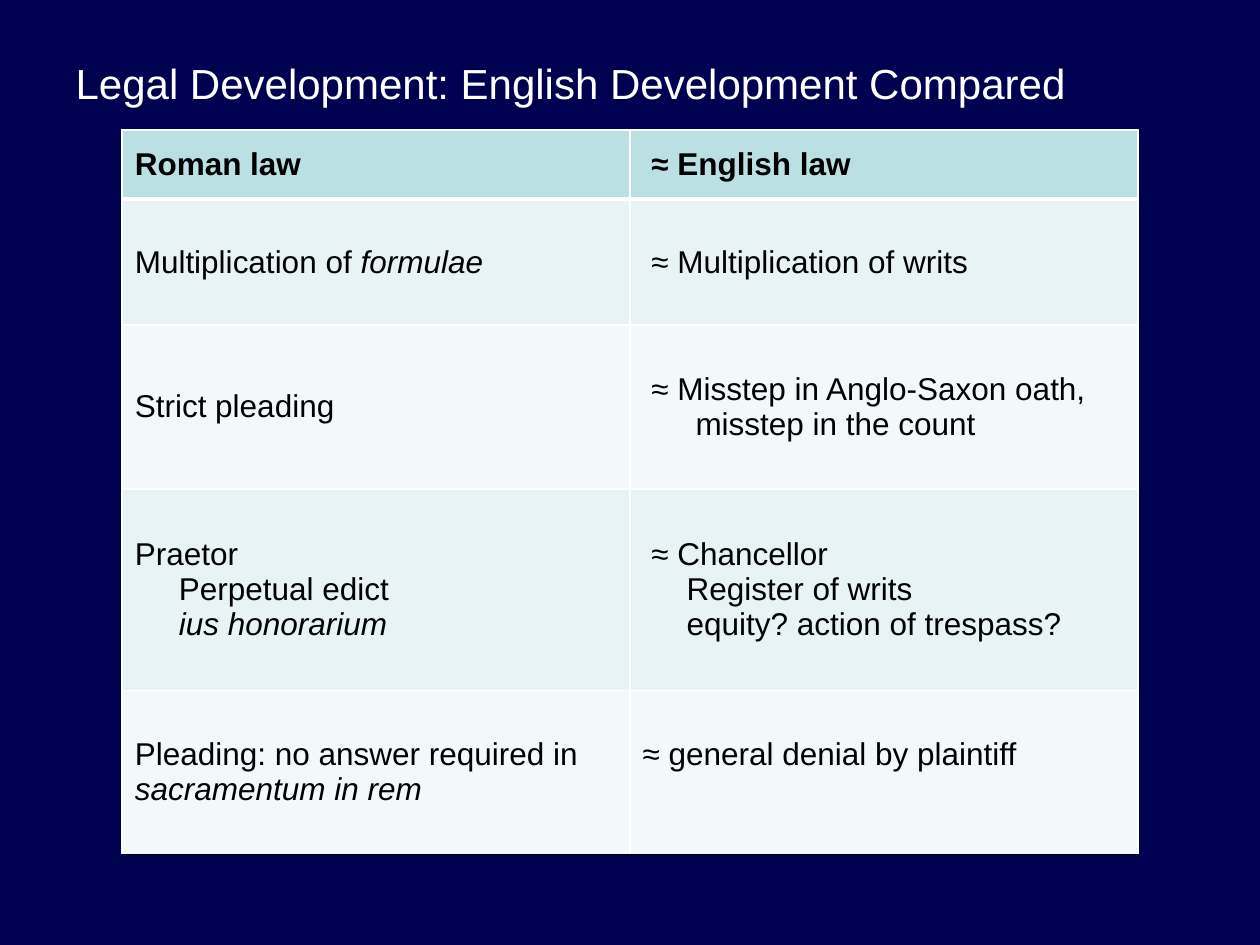
from lxml import etree
from pptx import Presentation
from pptx.dml.color import RGBColor
from pptx.enum import text
from pptx.oxml import ns
from pptx.util import Inches, Pt

NAVY = RGBColor(0x00, 0x00, 0x50)
WHITE = RGBColor(0xFF, 0xFF, 0xFF)
BLACK = RGBColor(0x00, 0x00, 0x00)
HEADER_TEAL = RGBColor(0xBB, 0xE0, 0xE3)
BANDS = (RGBColor(0xE7, 0xF3, 0xF4), RGBColor(0xF3, 0xF9, 0xFA))
FONT = "Arial"

TITLE = "Legal Development: English Development Compared"
# A cell is a list of paragraphs: (left margin, first-line indent, runs).
# A run that starts with * is italic.
PLAIN, EQUIVALENT, WRAPPED, SUB = (0, 0), (0.07, 0), (0.42, -0.35), (0.35, 0)
ROWS = [
    (0.55, [(PLAIN, ["Roman law"])], [(EQUIVALENT, ["≈ English law"])]),
    (1.0, [(PLAIN, ["Multiplication of ", "*formulae"])],
     [(EQUIVALENT, ["≈ Multiplication of writs"])]),
    (1.3, [(PLAIN, ["Strict pleading"])],
     [(WRAPPED, ["≈ Misstep in Anglo-Saxon oath, misstep in the count"])]),
    (1.6, [(PLAIN, ["Praetor"]), (SUB, ["Perpetual edict"]), (SUB, ["*ius honorarium"])],
     [(EQUIVALENT, ["≈ Chancellor"]), (SUB, ["Register of writs"]),
      (SUB, ["equity? action of trespass?"])]),
    (1.3, [(PLAIN, ["Pleading: no answer required in ", "*sacramentum in rem"])],
     [(PLAIN, ["≈ general denial by plaintiff"])]),
]
COLUMN_WIDTH = 4.03
LINE_HEIGHT = 0.28


def style(run, size, color, bold=False, italic=False):
    font = run.font
    font.name, font.size, font.bold, font.italic = FONT, Pt(size), bold, italic
    font.color.rgb = color


def set_borders(cell, bottom_color, bottom_width):
    properties = cell._tc.get_or_add_tcPr()
    for side in "LRTB":
        color, width = (bottom_color, bottom_width) if side == "B" else (WHITE, 1)
        line = etree.SubElement(properties, ns.qn(f"a:ln{side}"), w=str(Pt(width)))
        fill = etree.SubElement(line, ns.qn("a:solidFill"))
        etree.SubElement(fill, ns.qn("a:srgbClr"), val=str(color))


def write_cell(cell, paragraphs, bold):
    cell.vertical_anchor = text.MSO_ANCHOR.MIDDLE
    frame = cell.text_frame
    for index, ((margin, indent), runs) in enumerate(paragraphs):
        paragraph = frame.add_paragraph() if index else frame.paragraphs[0]
        properties = paragraph._p.get_or_add_pPr()
        properties.set("marL", str(Inches(margin)))
        properties.set("indent", str(Inches(indent)))
        for content in runs:
            run = paragraph.add_run()
            run.text = content.removeprefix("*")
            style(run, 18, BLACK, bold, content.startswith("*"))


presentation = Presentation()
presentation.slide_width, presentation.slide_height = Inches(10), Inches(7.5)
slide = presentation.slides.add_slide(presentation.slide_layouts[5])
slide.background.fill.solid()
slide.background.fill.fore_color.rgb = NAVY

title = slide.shapes.title
title.left, title.top, title.width, title.height = map(Inches, (0.5, 0.41, 9, 1.25))
title.text_frame.text = TITLE
title.text_frame.vertical_anchor = text.MSO_ANCHOR.TOP
title.text_frame.paragraphs[0].alignment = text.PP_ALIGN.LEFT
style(title.text_frame.paragraphs[0].runs[0], 24, WHITE)

table = slide.shapes.add_table(
    len(ROWS), 2, Inches(0.97), Inches(1.03), Inches(2 * COLUMN_WIDTH),
    Inches(sum(row[0] for row in ROWS))).table
for column in table.columns:
    column.width = Inches(COLUMN_WIDTH)

last = len(ROWS) - 1
for row, (height, *cells) in enumerate(ROWS):
    table.rows[row].height = Inches(height)
    for column, paragraphs in enumerate(cells):
        cell = table.cell(row, column)
        set_borders(cell, BLACK if row == last else WHITE, 1 if row else 3)
        cell.fill.solid()
        cell.fill.fore_color.rgb = BANDS[(row - 1) % 2] if row else HEADER_TEAL
        write_cell(cell, paragraphs, bold=row == 0)

# Lines the single-line answer up with the first line of its neighbour.
table.cell(last, 1).margin_bottom = Inches(0.05 + LINE_HEIGHT)

presentation.save("out.pptx")
